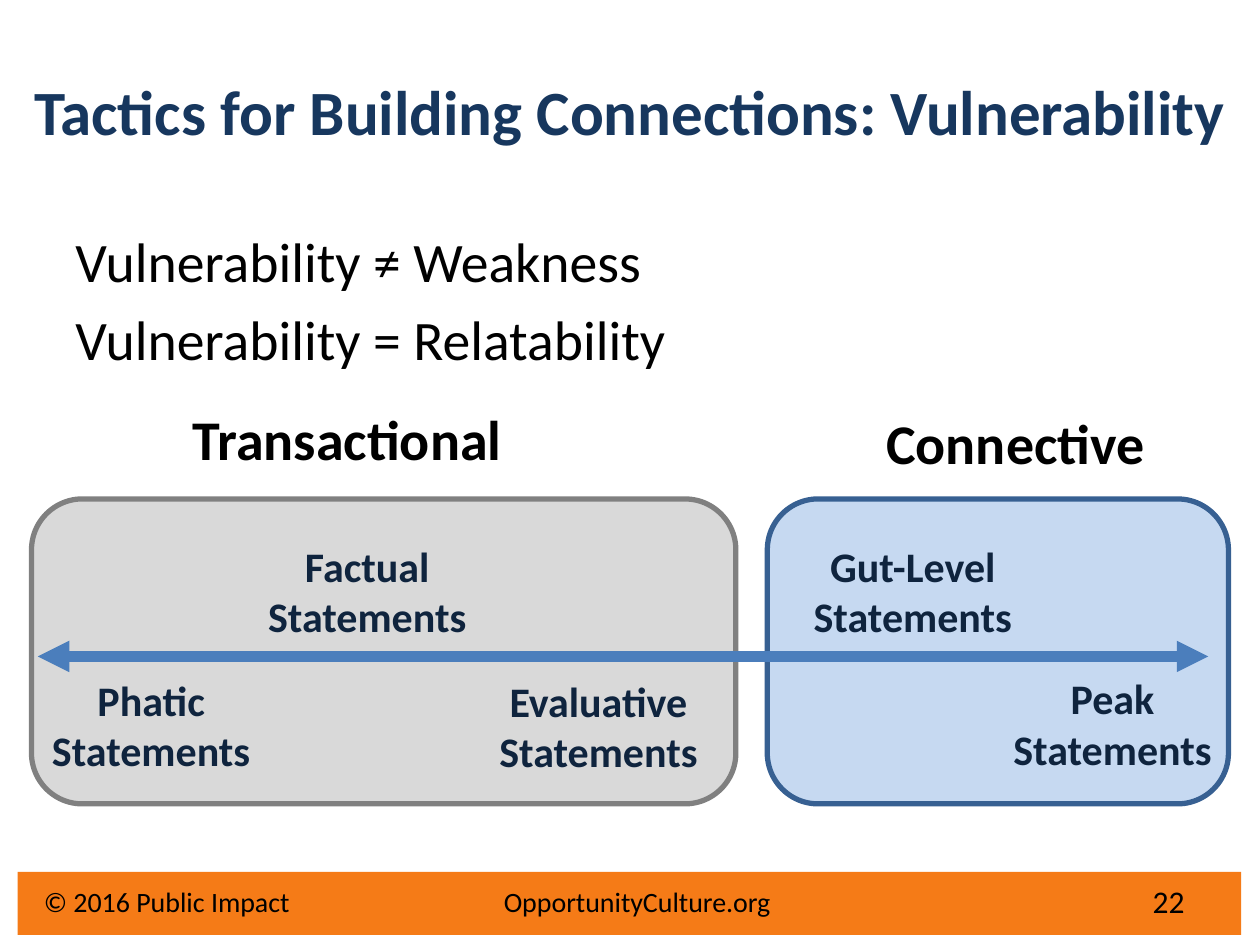
"""Builds the slide on vulnerability as a tactic for building connections."""
import pptx
import pptx.dml.color
import pptx.enum.shapes
import pptx.enum.text
import pptx.oxml
import pptx.oxml.ns
import pptx.util
from pptx.util import Inches

THEME = {
    "font": "Calibri",
    "colors": {
        "black": "000000", "title": "17375E", "statement": "0F243E",
        "footer": "F57B17", "arrow": "4B7EBC",
        "connective": "C6D9F1", "connective_edge": "376092",
        "transactional": "D9D9D9", "transactional_edge": "808080",
    },
    "sizes": {"title": 36, "body": 31.8, "heading": 32, "statement": 24,
              "footer": 16, "number": 18},
}
ALIGN = pptx.enum.text.PP_ALIGN
ANCHOR = pptx.enum.text.MSO_ANCHOR
SHAPES = pptx.enum.shapes.MSO_SHAPE

TITLE = "Tactics for Building Connections: Vulnerability"
EQUATIONS = ["Vulnerability ≠ Weakness", "Vulnerability = Relatability"]
FOOTER = "© 2016 Public Impact\tOpportunityCulture.org"
PAGE_NUMBER = "22"
ZONES = [("connective", 6.09, 3.66), ("transactional", 0.25, 5.59)]
ZONE_TOP, ZONE_HEIGHT = 3.96, 2.42
HEADINGS = [("Transactional", 1.43, 3.16, 3.07, ALIGN.LEFT),
            ("Connective", 6.62, 3.19, 2.88, ALIGN.CENTER)]
STATEMENTS = [("Phatic", 0.3, 5.3, 1.8), ("Factual", 2, 4.24, 1.83),
              ("Evaluative", 3.75, 5.31, 2), ("Gut-Level", 6.33, 4.24, 1.83),
              ("Peak", 7.91, 5.29, 1.84)]
ARROW_LEFT, ARROW_RIGHT, ARROW_Y = 0.3, 9.59, 5.21
FOOTER_TAB = 3.65


def color(name):
    return pptx.dml.color.RGBColor.from_string(THEME["colors"][name])


def add_panel(slide, preset, box, fill, edge=None):
    panel = slide.shapes.add_shape(preset, *map(Inches, box))
    panel.shadow.inherit = False
    panel.fill.solid()
    panel.fill.fore_color.rgb = color(fill)
    if edge:
        panel.line.color.rgb = color(edge)
        panel.line.width = pptx.util.Pt(3)
    else:
        panel.line.fill.background()


def add_text(slide, lines, box, size, ink="black", bold=False,
             align=ALIGN.LEFT, anchor=ANCHOR.TOP, gap=0, tab=None):
    frame = slide.shapes.add_textbox(*map(Inches, box)).text_frame
    frame.word_wrap = True
    frame.vertical_anchor = anchor
    for index, line in enumerate(lines):
        paragraph = frame.paragraphs[0] if index == 0 else frame.add_paragraph()
        paragraph.alignment = align
        if index:
            paragraph.space_before = pptx.util.Pt(gap)
        if tab:
            stops = pptx.oxml.parse_xml(
                f'<a:tabLst {pptx.oxml.ns.nsdecls("a")}>'
                f'<a:tab pos="{Inches(tab)}" algn="l"/></a:tabLst>')
            paragraph.alignment = align
            paragraph._p.get_or_add_pPr().append(stops)
        run = paragraph.add_run()
        run.text = line
        run.font.name = THEME["font"]
        run.font.size = pptx.util.Pt(THEME["sizes"][size])
        run.font.bold = bold
        run.font.color.rgb = color(ink)


def add_arrow(slide):
    arrow = slide.shapes.add_connector(
        pptx.enum.shapes.MSO_CONNECTOR.STRAIGHT,
        *map(Inches, (ARROW_LEFT, ARROW_Y, ARROW_RIGHT, ARROW_Y)))
    arrow.line.color.rgb = color("arrow")
    arrow.line.width = pptx.util.Pt(6)
    outline = arrow.line._get_or_add_ln()
    for end in ("a:headEnd", "a:tailEnd"):
        tip = pptx.oxml.parse_xml(
            f'<{end} {pptx.oxml.ns.nsdecls("a")} type="triangle"/>')
        outline.append(tip)
    outline.addnext(pptx.oxml.parse_xml(
        f'<a:effectLst {pptx.oxml.ns.nsdecls("a")}/>'))


def main():
    deck = pptx.Presentation()
    deck.slide_width, deck.slide_height = Inches(10), Inches(7.5)
    slide = deck.slides.add_slide(deck.slide_layouts[6])

    add_panel(slide, SHAPES.RECTANGLE, (0.14, 6.92, 9.71, 0.5), "footer")
    for zone, left, width in ZONES:
        add_panel(slide, SHAPES.ROUNDED_RECTANGLE,
                  (left, ZONE_TOP, width, ZONE_HEIGHT), zone, f"{zone}_edge")

    add_text(slide, [TITLE], (0, 0.25, 10, 1.25), "title", "title", True,
             ALIGN.CENTER, ANCHOR.MIDDLE)
    add_text(slide, EQUATIONS, (0.5, 1.75, 9, 1.08), "body", gap=6.4)
    for kind, left, top, width in STATEMENTS:
        add_text(slide, [f"{kind} Statements"], (left, top, width, 0.91),
                 "statement", "statement", True, ALIGN.CENTER)
    add_arrow(slide)
    for heading, left, top, width, align in HEADINGS:
        add_text(slide, [heading], (left, top, width, 0.64), "heading",
                 bold=True, align=align)

    add_text(slide, [FOOTER], (0.25, 6.97, 6.92, 0.37), "footer", tab=FOOTER_TAB)
    add_text(slide, [PAGE_NUMBER], (8.83, 6.95, 0.67, 0.4), "number",
             align=ALIGN.RIGHT, anchor=ANCHOR.MIDDLE)
    deck.save("out.pptx")


if __name__ == "__main__":
    main()
